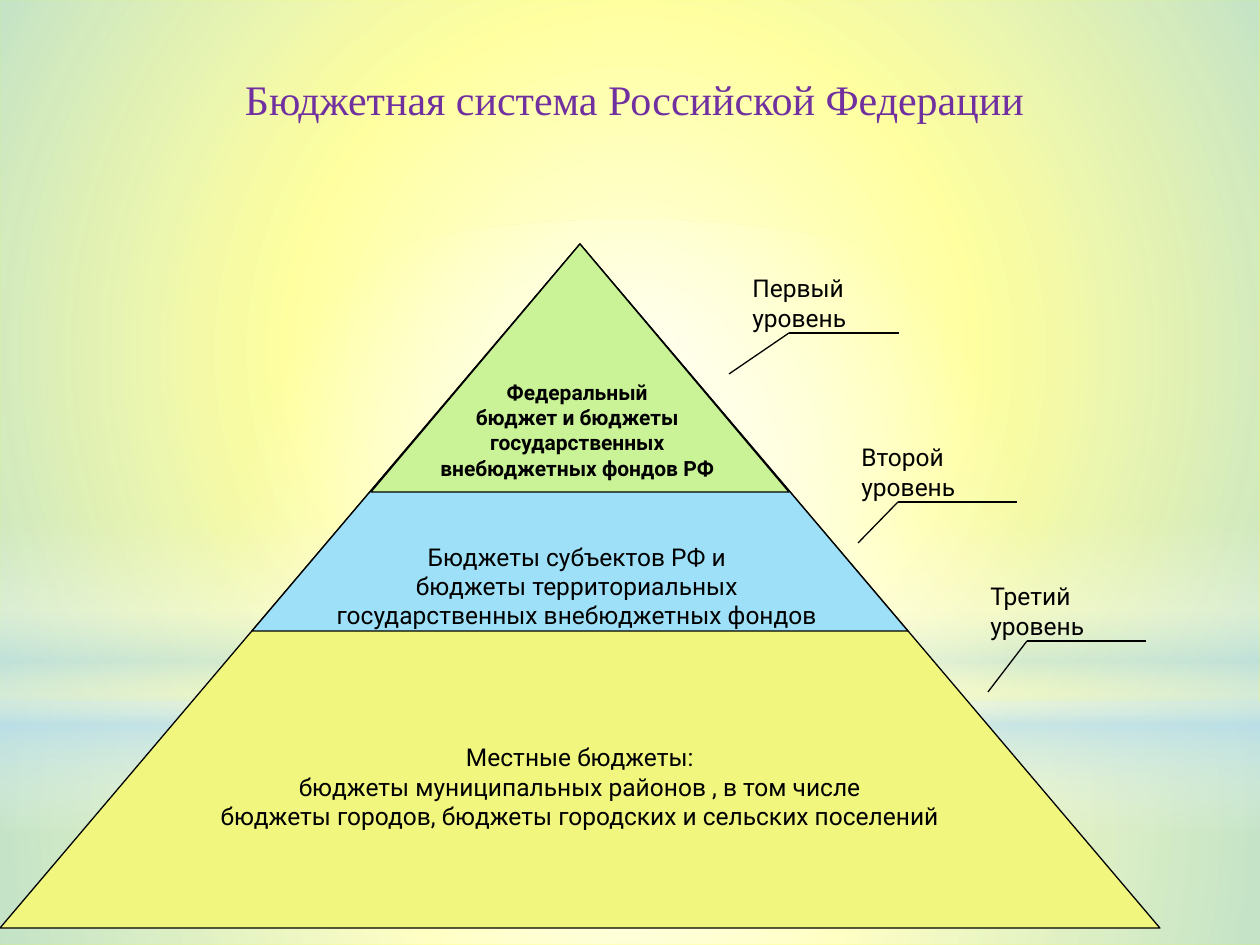
from dataclasses import dataclass

import lxml.etree
import pptx
import pptx.dml.color
import pptx.enum.shapes
import pptx.enum.text
import pptx.oxml.ns
import pptx.util

PX_PER_INCH = 126
APEX_X, APEX_Y = 580, 244
BLACK = "000000"
CENTER = pptx.enum.text.PP_ALIGN.CENTER
LEFT = pptx.enum.text.PP_ALIGN.LEFT
SHAPES = pptx.enum.shapes.MSO_SHAPE
RADIAL = ("path", {"path": "circle"})
VERTICAL = ("lin", {"ang": "5400000", "scaled": "0"})


@dataclass
class Glow:
    kind: int
    top: int
    height: int
    direction: tuple
    stops: list[tuple[int, str, int]]


@dataclass
class Tier:
    width: int
    height: int
    color: str
    size: int
    bold: bool
    inset_top: int
    inset_bottom: int
    lines: list[str]


@dataclass
class Callout:
    label: str
    tip_x: int
    tip_y: int
    elbow_x: int
    elbow_y: int
    end_x: int


GLOWS = [
    Glow(SHAPES.RECTANGLE, 703, 242, RADIAL,
         [(0, "FFFFFF", 91), (37, "FFFFFF", 76), (100, "B4DCFA", 79)]),
    Glow(SHAPES.RECTANGLE, 0, 703, RADIAL,
         [(0, "FFFFFF", 89), (48, "FFFFFF", 62), (100, "B4DCFA", 79)]),
    Glow(SHAPES.RECTANGLE, 519, 315, VERTICAL,
         [(0, "FFFFFF", 0), (29, "FFFFFF", 30), (45, "B4DCFA", 40),
          (55, "FFFFFF", 26), (65, "B4DCFA", 60), (100, "FFFFFF", 0)]),
    Glow(SHAPES.OVAL, 220, 703, RADIAL, [(0, "FFFFFF", 100), (56, "FFFFFF", 0)]),
]

TIERS = [
    Tier(1160, 684, "F0F67E", 14, False, 65, 6,
         ["Местные бюджеты:",
          " бюджеты муниципальных районов , в том числе ",
          "бюджеты городов, бюджеты городских и сельских поселений"]),
    Tier(656, 387, "9EE0F8", 14, False, 103, 0,
         ["Бюджеты субъектов РФ и ",
          "бюджеты территориальных ",
          "государственных внебюджетных фондов "]),
    Tier(418, 248, "CAF297", 12, True, 6, 6,
         ["Федеральный ",
          "бюджет и бюджеты ",
          "государственных ",
          "внебюджетных фондов РФ "]),
]

CALLOUTS = [
    Callout("Первый уровень", 729, 374, 789, 333, 899),
    Callout("Второй уровень", 858, 543, 898, 502, 1017),
    Callout("Третий уровень", 988, 692, 1027, 641, 1146),
]


def emu(px: int) -> int:
    return round(px * 914400 / PX_PER_INCH)


def rgb(color: str) -> pptx.dml.color.RGBColor:
    return pptx.dml.color.RGBColor.from_string(color)


def add_child(parent, tag: str, **attributes: str):
    return lxml.etree.SubElement(parent, pptx.oxml.ns.qn("a:" + tag), attributes)


def write_text(frame, lines: list[str], size: int, color: str = BLACK,
               font: str = "Roboto", align=CENTER, bold: bool = False,
               wrap: bool = True) -> None:
    frame.text = "\n".join(lines)
    frame.word_wrap = wrap
    frame.vertical_anchor = pptx.enum.text.MSO_ANCHOR.MIDDLE
    for para in frame.paragraphs:
        para.alignment = align
        for span in para.runs:
            span.font.name = font
            span.font.size = pptx.util.Pt(size)
            span.font.bold = bold
            span.font.color.rgb = rgb(color)


def add_glow(page, glow: Glow) -> None:
    shape = page.shapes.add_shape(
        glow.kind, 0, emu(glow.top), emu(1260), emu(glow.height))
    shape.shadow.inherit = False
    shape.line.fill.background()
    shape.fill.gradient()
    gradient = shape.fill._xPr.find(pptx.oxml.ns.qn("a:gradFill"))
    for child in list(gradient):
        gradient.remove(child)
    stop_list = add_child(gradient, "gsLst")
    for position, color, opacity in glow.stops:
        stop = add_child(stop_list, "gs", pos=str(position * 1000))
        tint = add_child(stop, "srgbClr", val=color)
        add_child(tint, "alpha", val=str(opacity * 1000))
    tag, attributes = glow.direction
    direction = add_child(gradient, tag, **attributes)
    if tag == "path":
        add_child(direction, "fillToRect", l="50000", t="50000", r="50000", b="50000")


def add_tier(page, tier: Tier) -> None:
    shape = page.shapes.add_shape(
        SHAPES.ISOSCELES_TRIANGLE, emu(APEX_X - tier.width // 2), emu(APEX_Y),
        emu(tier.width), emu(tier.height))
    shape.shadow.inherit = False
    shape.fill.solid()
    shape.fill.fore_color.rgb = rgb(tier.color)
    shape.line.color.rgb = rgb(BLACK)
    shape.line.width = pptx.util.Pt(0.75)
    frame = shape.text_frame
    frame.margin_top = emu(tier.inset_top)
    frame.margin_bottom = emu(tier.inset_bottom)
    write_text(frame, tier.lines, tier.size, bold=tier.bold, wrap=False)


def add_line(page, x1: int, y1: int, x2: int, y2: int) -> None:
    line = page.shapes.add_connector(
        pptx.enum.shapes.MSO_CONNECTOR.STRAIGHT, emu(x1), emu(y1), emu(x2), emu(y2))
    line.line.color.rgb = rgb(BLACK)
    line.line.width = pptx.util.Pt(0.75)
    add_child(line._element.spPr, "effectLst")


def add_callout(page, callout: Callout) -> None:
    add_line(page, callout.tip_x, callout.tip_y, callout.elbow_x, callout.elbow_y)
    add_line(page, callout.elbow_x, callout.elbow_y, callout.end_x, callout.elbow_y)
    box = page.shapes.add_textbox(
        emu(callout.elbow_x - 49), emu(callout.elbow_y - 52), emu(200), emu(43))
    write_text(box.text_frame, [callout.label], 14, align=LEFT)


def main() -> None:
    deck = pptx.Presentation()
    deck.slide_width, deck.slide_height = emu(1260), emu(945)
    page = deck.slides.add_slide(deck.slide_layouts[6])
    page.background.fill.solid()
    page.background.fill.fore_color.rgb = rgb("FFFF00")
    for glow in GLOWS:
        add_glow(page, glow)
    title = page.shapes.add_textbox(emu(203), emu(49), emu(863), emu(100))
    write_text(title.text_frame, ["Бюджетная система Российской Федерации"], 24,
               color="7030A0", font="Times New Roman")
    for tier in TIERS:
        add_tier(page, tier)
    for callout in CALLOUTS:
        add_callout(page, callout)
    deck.save("out.pptx")


if __name__ == "__main__":
    main()
